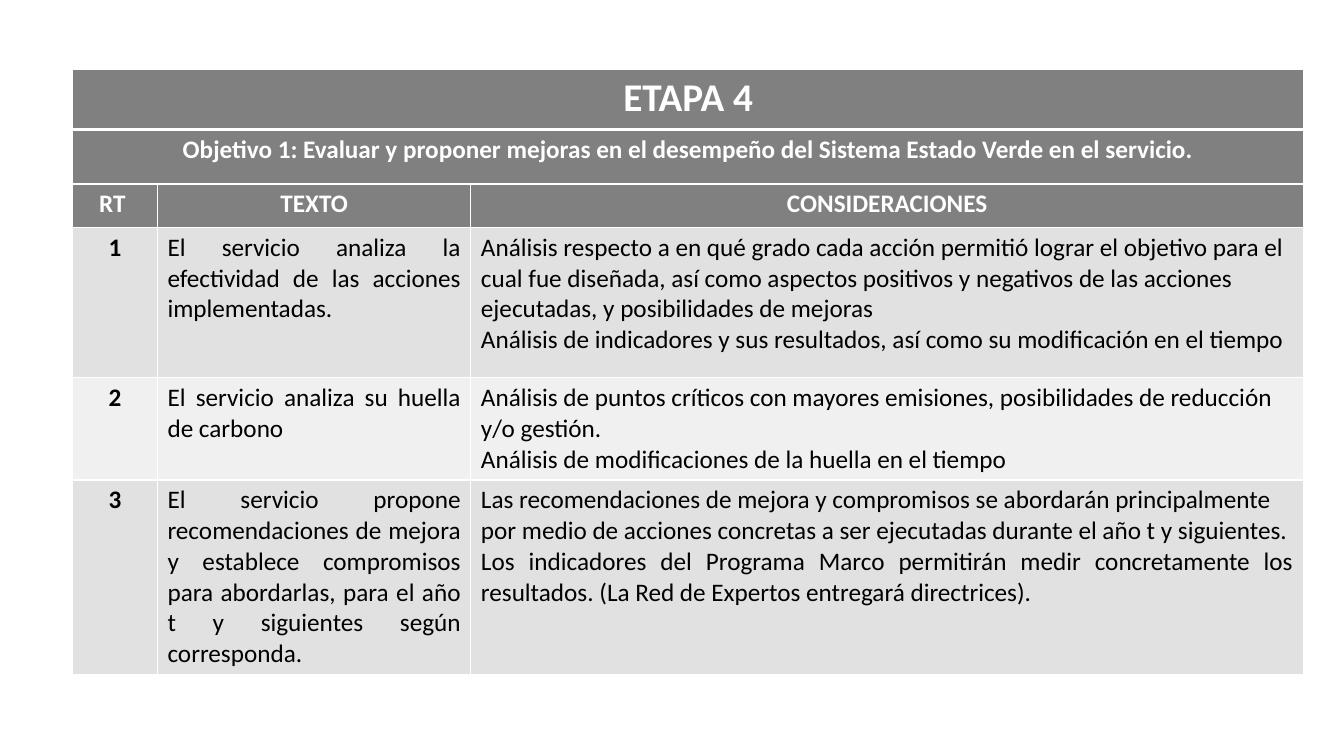
import pptx
import pptx.dml.color
import pptx.enum.text
import pptx.util
from lxml import etree
from pptx.oxml.ns import qn

Pt = pptx.util.Pt
RGBColor = pptx.dml.color.RGBColor
Align = pptx.enum.text.PP_ALIGN

WHITE = RGBColor(0xFF, 0xFF, 0xFF)
BLACK = RGBColor(0x00, 0x00, 0x00)
HEADER_GRAY = RGBColor(0x80, 0x80, 0x80)
BAND_DARK = RGBColor(0xE1, 0xE1, 0xE1)
BAND_LIGHT = RGBColor(0xF0, 0xF0, 0xF0)

COLUMN_WIDTHS = [60.5, 223.9, 594.7]
ROW_HEIGHTS = [43.2, 38.9, 31, 107.3, 49.7, 116.6]
STAGE = "ETAPA 4"
OBJECTIVE = (
    "Objetivo 1: Evaluar y proponer mejoras en el desempeño "
    "del Sistema Estado Verde en el servicio."
)
HEADINGS = ["RT ", "TEXTO", "CONSIDERACIONES"]
REQUIREMENTS = [
    (
        "El servicio analiza la efectividad de las acciones implementadas. ",
        [
            ("Análisis respecto a en qué grado cada acción permitió lograr el objetivo "
             "para el cual fue diseñada, así como aspectos positivos y negativos de las "
             "acciones ejecutadas, y posibilidades de mejoras", Align.LEFT),
            ("Análisis de indicadores y sus resultados, así como su modificación "
             "en el tiempo", Align.LEFT),
        ],
    ),
    (
        "El servicio analiza su huella de carbono",
        [
            ("Análisis de puntos críticos con mayores emisiones, posibilidades de "
             "reducción y/o gestión.", Align.LEFT),
            ("Análisis de modificaciones de la huella en el tiempo", Align.LEFT),
        ],
    ),
    (
        "El servicio propone recomendaciones de mejora y establece compromisos para "
        "abordarlas, para el año t y siguientes según corresponda.",
        [
            ("Las recomendaciones de mejora y compromisos se abordarán principalmente "
             "por medio de acciones concretas a ser ejecutadas durante el año t y "
             "siguientes.", Align.LEFT),
            ("Los indicadores del Programa Marco permitirán medir concretamente los "
             "resultados. (La Red de Expertos entregará directrices).", Align.JUSTIFY),
        ],
    ),
]


class SlideBuilder:
    font_name = "Calibri"
    text_size = 18
    border_color = WHITE

    def __init__(self, slide):
        self.slide = slide

    def table(self, left, top, widths, heights):
        grid = self.slide.shapes.add_table(
            len(heights), len(widths), Pt(left), Pt(top), Pt(sum(widths)), Pt(sum(heights))
        ).table
        for column, width in zip(grid.columns, widths):
            column.width = Pt(width)
        for row, height in zip(grid.rows, heights):
            row.height = Pt(height)
        return grid

    def borders(self, cell, top=1, bottom=1):
        properties = cell._tc.get_or_add_tcPr()
        sides = [("a:lnL", 1), ("a:lnR", 1), ("a:lnT", top), ("a:lnB", bottom)]
        for position, (tag, width) in enumerate(sides):
            line = etree.Element(qn(tag), w=str(Pt(width)))
            fill = etree.SubElement(line, qn("a:solidFill"))
            etree.SubElement(fill, qn("a:srgbClr"), val=str(self.border_color))
            properties.insert(position, line)

    def fill(self, cell, color):
        cell.fill.solid()
        cell.fill.fore_color.rgb = color

    def text(self, cell, entries, color=BLACK, bold=False, size=text_size):
        frame = cell.text_frame
        for index, (wording, alignment) in enumerate(entries):
            paragraph = frame.add_paragraph() if index else frame.paragraphs[0]
            paragraph.text = wording
            paragraph.alignment = alignment
            paragraph.font.name = self.font_name
            paragraph.font.size = Pt(size)
            paragraph.font.bold = bold
            paragraph.font.color.rgb = color

    def heading(self, cell, wording, size=text_size):
        self.text(cell, [(wording, Align.CENTER)], WHITE, True, size)


def main():
    deck = pptx.Presentation()
    deck.slide_width, deck.slide_height = Pt(960), Pt(540)
    builder = SlideBuilder(deck.slides.add_slide(deck.slide_layouts[6]))
    stage_table = builder.table(52, 49.3, COLUMN_WIDTHS, ROW_HEIGHTS)

    row_fills = [HEADER_GRAY] * 3 + [BAND_DARK, BAND_LIGHT, BAND_DARK]
    for row_index, color in enumerate(row_fills):
        for cell in stage_table.rows[row_index].cells:
            builder.fill(cell, color)
            builder.borders(
                cell,
                top=3 if row_index == 1 else 1,
                bottom=3 if row_index == 0 else 1,
            )

    for row_index, (wording, size) in enumerate([(STAGE, 28), (OBJECTIVE, 18)]):
        banner = stage_table.cell(row_index, 0)
        banner.merge(stage_table.cell(row_index, 2))
        builder.heading(banner, wording, size)

    for column_index, wording in enumerate(HEADINGS):
        builder.heading(stage_table.cell(2, column_index), wording)

    for number, (requirement, considerations) in enumerate(REQUIREMENTS, 1):
        number_cell, requirement_cell, considerations_cell = stage_table.rows[number + 2].cells
        builder.text(number_cell, [(str(number), Align.CENTER)], bold=True)
        builder.text(requirement_cell, [(requirement, Align.JUSTIFY)])
        builder.text(considerations_cell, considerations)

    deck.save("out.pptx")


if __name__ == "__main__":
    main()
